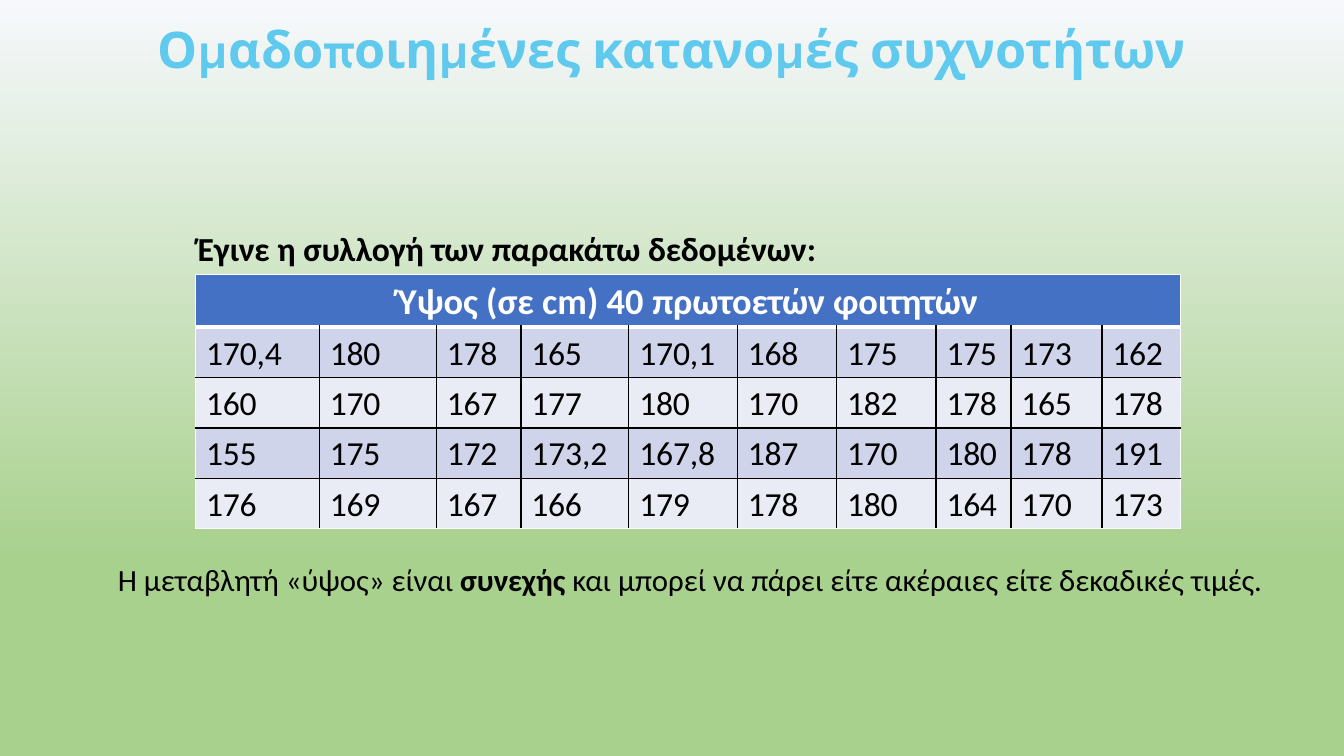
from lxml import etree
from pptx import Presentation
from pptx.dml.color import RGBColor
from pptx.enum.text import MSO_ANCHOR, PP_ALIGN
from pptx.oxml.ns import qn
from pptx.util import Pt

CENTER, LEFT, JUSTIFY = PP_ALIGN.CENTER, PP_ALIGN.LEFT, PP_ALIGN.JUSTIFY
TOP, MIDDLE = MSO_ANCHOR.TOP, MSO_ANCHOR.MIDDLE
BODY_FONT, TITLE_FONT = "Calibri", "Karla"

COLORS = {
    "sky": "F6F8FC",
    "meadow": "A9D18E",
    "title": "5FCAEE",
    "header": "4471C4",
    "odd_row": "CFD4EA",
    "even_row": "E9EBF5",
    "white": "FFFFFF",
    "black": "000000",
}
BACKGROUND_STOPS = [(0, "sky"), (74, "meadow"), (83, "meadow"), (100, "meadow")]

COLUMN_WIDTHS = [88.5, 83.5, 60.5, 77, 77.5, 71, 71, 53.5, 65, 56]
HEADER_HEIGHT, ROW_HEIGHT = 38, 36
HEIGHTS_CM = [
    ["170,4", "180", "178", "165", "170,1", "168", "175", "175", "173", "162"],
    ["160", "170", "167", "177", "180", "170", "182", "178", "165", "178"],
    ["155", "175", "172", "173,2", "167,8", "187", "170", "180", "178", "191"],
    ["176", "169", "167", "166", "179", "178", "180", "164", "170", "173"],
]


def paint_background(slide):
    fill = slide.background.fill
    fill.gradient()
    fill.gradient_angle = 270
    stops = slide.element.find(".//" + qn("a:gsLst"))
    for stop in list(stops):
        stops.remove(stop)
    for percent, color in BACKGROUND_STOPS:
        stop = etree.SubElement(stops, qn("a:gs"), pos=str(percent * 1000))
        etree.SubElement(stop, qn("a:srgbClr"), val=COLORS[color])


def add_run(paragraph, text, size, color, bold=False, spacing=0.0, font=BODY_FONT):
    run = paragraph.add_run()
    run.text = text
    run.font.name = font
    run.font.size = Pt(size)
    run.font.bold = bold
    run.font.color.rgb = RGBColor.from_string(COLORS[color])
    if spacing:
        run.font._element.set("spc", str(round(spacing * 100)))


def add_line(slide, box, align, anchor=TOP):
    frame = slide.shapes.add_textbox(*map(Pt, box)).text_frame
    frame.word_wrap = True
    frame.vertical_anchor = anchor
    frame.margin_left = frame.margin_right = Pt(0.7)
    frame.margin_top, frame.margin_bottom = Pt(2), 0
    paragraph = frame.paragraphs[0]
    paragraph.alignment = align
    return paragraph


def add_title(slide, box):
    title = add_line(slide, box, CENTER, MIDDLE)
    add_run(title, "Ομαδοποιημένες κατανομές συχνοτήτων", 36, "title", True, -0.2, TITLE_FONT)


def add_intro(slide, box):
    intro = add_line(slide, box, LEFT)
    add_run(intro, "Έγινε η συλλογή των παρακάτω δεδομένων", 24, "black", True)
    add_run(intro, ":", 24, "black", True, -0.1)


def add_conclusion(slide, box):
    conclusion = add_line(slide, box, JUSTIFY)
    for text, bold, spacing in [
        ("Η μεταβλητή «ύψος» είναι ", False, 0),
        ("συνεχής ", True, 0),
        ("και μπορεί να πάρει είτε ακέραιες ", False, 0),
        ("είτε ", False, -0.2),
        ("δεκαδικές ", False, 0),
        ("τιμές.", False, -0.1),
    ]:
        add_run(conclusion, text, 22, "black", bold, spacing)


def style_cell(cell, fill, borders, margin_left):
    cell.margin_left, cell.margin_right = Pt(margin_left), 0
    cell.margin_top, cell.margin_bottom = Pt(4.3), 0
    cell.vertical_anchor = TOP
    properties = cell._tc.get_or_add_tcPr()
    for side, (color, width) in zip("LRTB", borders):
        border = etree.SubElement(properties, qn("a:ln" + side), w=str(Pt(width)))
        solid = etree.SubElement(border, qn("a:solidFill"))
        etree.SubElement(solid, qn("a:srgbClr"), val=COLORS[color])
    cell.fill.solid()
    cell.fill.fore_color.rgb = RGBColor.from_string(COLORS[fill])


def add_heights_table(slide, box):
    row_count, column_count = len(HEIGHTS_CM), len(COLUMN_WIDTHS)
    table = slide.shapes.add_table(row_count + 1, column_count, *map(Pt, box)).table
    table.first_row = table.horz_banding = False
    for column, width in zip(table.columns, COLUMN_WIDTHS):
        column.width = Pt(width)
    for row in table.rows:
        row.height = Pt(ROW_HEIGHT)
    table.rows[0].height = Pt(HEADER_HEIGHT)

    outer, inner, header_rule = ("white", 1), ("black", 1), ("white", 3)
    for column in range(column_count):
        style_cell(table.cell(0, column), "header", [outer, outer, outer, header_rule], 0)
    header = table.cell(0, 0)
    header.merge(table.cell(0, column_count - 1))
    heading = header.text_frame.paragraphs[0]
    heading.alignment = CENTER
    add_run(heading, "Ύψος (σε cm) 40 ", 26, "white", True)
    add_run(heading, "πρωτοετών φοιτητών", 26, "white", True, -0.1)

    for row, values in enumerate(HEIGHTS_CM, 1):
        for column, value in enumerate(values):
            cell = table.cell(row, column)
            borders = [
                outer if column == 0 else inner,
                outer if column == column_count - 1 else inner,
                header_rule if row == 1 else inner,
                outer if row == row_count else inner,
            ]
            style_cell(cell, "odd_row" if row % 2 else "even_row", borders, 7.5)
            spacing = -0.1 if "," in value else -0.2
            add_run(cell.text_frame.paragraphs[0], value, 24, "black", False, spacing)


def main():
    deck = Presentation()
    deck.slide_width, deck.slide_height = Pt(960), Pt(540)
    slide = deck.slides.add_slide(deck.slide_layouts[6])
    paint_background(slide)
    add_title(slide, (66, 11.5, 828, 44.6))
    table_height = HEADER_HEIGHT + ROW_HEIGHT * len(HEIGHTS_CM)
    add_heights_table(slide, (139.7, 195.8, sum(COLUMN_WIDTHS), table_height))
    add_intro(slide, (140.4, 160.6, 455, 31))
    add_conclusion(slide, (83.5, 398.2, 833, 27.4))
    deck.save("out.pptx")


if __name__ == "__main__":
    main()
